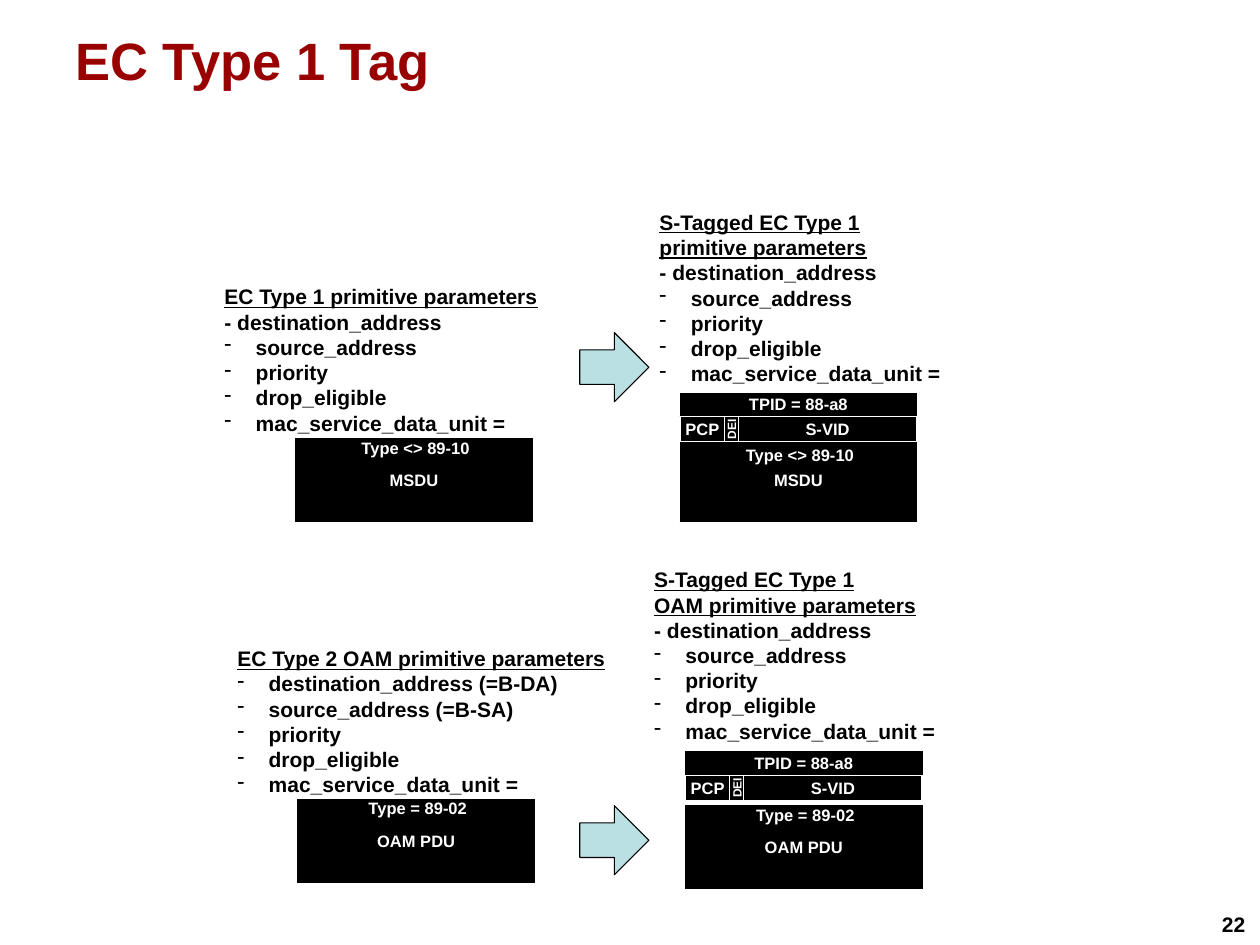
"""Build the EC Type 1 Tag slide with primitive parameters before and after S-tagging."""
from lxml.etree import SubElement
from pptx import Presentation
from pptx.dml.color import RGBColor
from pptx.enum.shapes import MSO_SHAPE as Shape
from pptx.enum.text import MSO_ANCHOR as Anchor, PP_ALIGN as Align
from pptx.oxml.ns import qn
from pptx.util import Inches, Pt

BLACK = RGBColor(0x00, 0x00, 0x00)
WHITE = RGBColor(0xFF, 0xFF, 0xFF)
DARK_RED = RGBColor(0x99, 0x00, 0x00)
PALE_TEAL = RGBColor(0xBB, 0xE0, 0xE3)


def style(paragraph, size, color):
    paragraph.font.name = "Arial"
    paragraph.font.size = Pt(size)
    paragraph.font.bold = True
    paragraph.font.color.rgb = color


def add_field(text, left, top, width, height, filled=True, size=11):
    bounds = [Inches(v) for v in (left, top, width, height)]
    if filled:
        field = slide.shapes.add_shape(Shape.RECTANGLE, *bounds)
        field.shadow.inherit = False
        field.fill.solid()
        field.fill.fore_color.rgb = BLACK
        field.line.color.rgb = WHITE
        field.line.width = Pt(0.75)
    else:
        field = slide.shapes.add_textbox(*bounds)
    frame = field.text_frame
    frame.word_wrap = False
    frame.vertical_anchor = Anchor.MIDDLE
    frame.margin_left = frame.margin_right = Inches(0.08)
    frame.margin_top = frame.margin_bottom = Inches(0.04)
    frame.text = text
    frame.paragraphs[0].alignment = Align.CENTER
    style(frame.paragraphs[0], size, WHITE)
    return field


prs = Presentation()
prs.slide_width, prs.slide_height = Inches(11.67), Inches(8.75)
slide = prs.slides.add_slide(prs.slide_layouts[5])

title = slide.shapes.title
title.left, title.top = Inches(0.58), Inches(0.2)
title.width, title.height = Inches(10.5), Inches(1.11)
heading = title.text_frame
heading.text = "EC Type 1 Tag"
heading.vertical_anchor = Anchor.TOP
heading.margin_left = heading.margin_right = Inches(0.12)
heading.margin_top = heading.margin_bottom = Inches(0.06)
heading.paragraphs[0].alignment = Align.LEFT
style(heading.paragraphs[0], 35, DARK_RED)

page_number = slide.shapes.add_textbox(Inches(11.22), Inches(8.39), Inches(0.44), Inches(0.34))
page_number.text_frame.word_wrap = False
page_number.text_frame.text = "22"
style(page_number.text_frame.paragraphs[0], 14, BLACK)

destination = ["- destination_address"]
common = ["priority", "drop_eligible", "mac_service_data_unit ="]
parameter_lists = [
    (1.98, 2.58, 3.45, 1.51, ["EC Type 1 primitive parameters"],
     destination, ["source_address"] + common),
    (2.1, 5.93, 3.63, 1.51, ["EC Type 2 OAM primitive parameters"],
     [], ["destination_address (=B-DA)", "source_address (=B-SA)"] + common),
    (6.01, 1.89, 3.03, 1.75, ["S-Tagged EC Type 1", "primitive parameters"],
     destination, ["source_address"] + common),
    (5.96, 5.2, 2.99, 1.75, ["S-Tagged EC Type 1", "OAM primitive parameters"],
     destination, ["source_address"] + common),
]
for left, top, width, height, headings, plain, bulleted in parameter_lists:
    parameters = slide.shapes.add_textbox(Inches(left), Inches(top), Inches(width), Inches(height))
    frame = parameters.text_frame
    frame.word_wrap = True
    lines = headings + plain + bulleted
    frame.text = "\n".join(lines)
    for index, paragraph in enumerate(frame.paragraphs):
        style(paragraph, 14, BLACK)
        paragraph.font.underline = index < len(headings)
        if index >= len(headings) + len(plain):
            properties = paragraph._p.get_or_add_pPr()
            properties.set("marL", str(Inches(0.29)))
            properties.set("indent", str(-Inches(0.29)))
            SubElement(properties, qn("a:buFontTx"))
            SubElement(properties, qn("a:buChar")).set("char", "-")
            properties.append(properties.find(qn("a:defRPr")))

payloads = [
    (2.73, 4.05, "MSDU", "Type <> 89-10", 4.03),
    (2.75, 7.39, "OAM PDU", "Type = 89-02", 7.37),
    (6.29, 4.05, "MSDU", "Type <> 89-10", 4.1),
    (6.34, 7.45, "OAM PDU", "Type = 89-02", 7.43),
]
for left, top, payload, ethertype, type_top in payloads:
    add_field(payload, left, top, 2.21, 0.79)
    add_field(ethertype, left + 0.02, type_top, 2.2, 0.23, filled=False)

for left, top in [(6.29, 3.63), (6.34, 6.95)]:
    tag_top = top + 0.23
    add_field("S-VID", left + 0.55, tag_top, 1.65, 0.23)
    add_field("PCP", left + 0.01, tag_top, 0.41, 0.23)
    drop_indicator = add_field("DEI", left + 0.42, tag_top, 0.13, 0.23, size=8)
    drop_indicator.text_frame._txBody.bodyPr.set("vert", "vert270")
    add_field("TPID = 88-a8", left, top, 2.21, 0.23)

for top in (3.08, 7.46):
    arrow = slide.shapes.add_shape(
        Shape.RIGHT_ARROW, Inches(5.37), Inches(top), Inches(0.64), Inches(0.64))
    arrow.shadow.inherit = False
    arrow.fill.solid()
    arrow.fill.fore_color.rgb = PALE_TEAL
    arrow.line.color.rgb = BLACK
    arrow.line.width = Pt(0.75)

prs.save("out.pptx")
